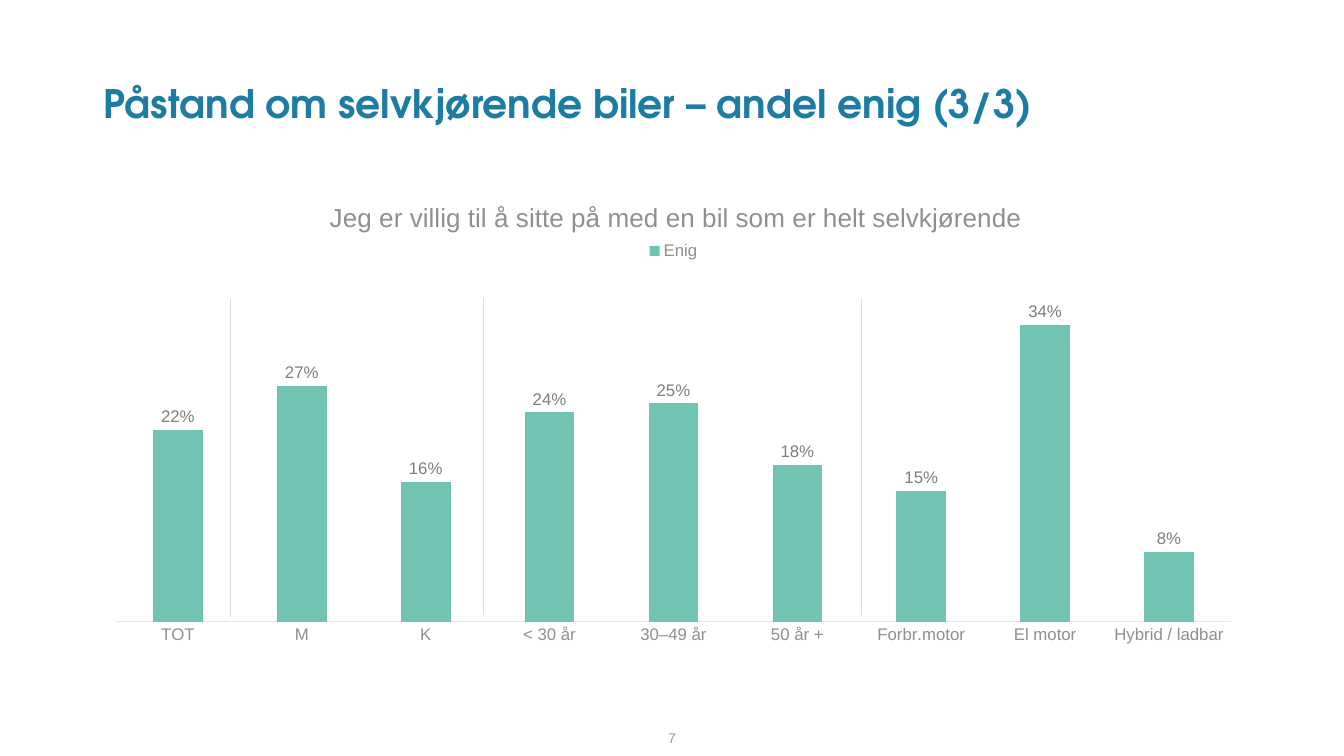
from dataclasses import dataclass

from lxml import etree
from pptx import Presentation
from pptx.chart.data import CategoryChartData
from pptx.dml.color import RGBColor
from pptx.enum.chart import XL_CHART_TYPE, XL_LABEL_POSITION, XL_LEGEND_POSITION, XL_TICK_MARK
from pptx.enum.shapes import MSO_CONNECTOR
from pptx.enum.text import MSO_ANCHOR, MSO_AUTO_SIZE, PP_ALIGN
from pptx.oxml.ns import qn
from pptx.util import Inches, Pt

COLUMNS = XL_CHART_TYPE.COLUMN_CLUSTERED
LABEL_OUTSIDE = XL_LABEL_POSITION.OUTSIDE_END
LEGEND_TOP = XL_LEGEND_POSITION.TOP
NO_TICKS = XL_TICK_MARK.NONE
STRAIGHT = MSO_CONNECTOR.STRAIGHT
BOTTOM, MIDDLE = MSO_ANCHOR.BOTTOM, MSO_ANCHOR.MIDDLE
NO_AUTOFIT = MSO_AUTO_SIZE.NONE
LEFT, CENTER = PP_ALIGN.LEFT, PP_ALIGN.CENTER
TITLE_ONLY = 5


@dataclass(frozen=True)
class Theme:
    heading_font: str = "TeX Gyre Adventor"
    body_font: str = "Arial"
    heading: str = "1C7CA1"
    page_number: str = "989998"
    chart_text: str = "515350"
    muted: str = "8E908C"
    value_label: str = "7C7F7B"
    bar: str = "71C3B3"
    axis: str = "E5E5E4"
    divider: str = "DCDDDC"
    heading_size: float = 28
    question_size: float = 18.6
    label_size: float = 12
    small_size: float = 10


THEME = Theme()
AGREEMENT = {
    "TOT": 0.22,
    "M": 0.27,
    "K": 0.16,
    "< 30 år": 0.24,
    "30–49 år": 0.25,
    "50 år +": 0.18,
    "Forbr.motor": 0.15,
    "El motor": 0.34,
    "Hybrid / ladbar": 0.08,
}
GROUP_DIVIDERS = [(2.28, 2.97, 6.12), (4.79, 2.96, 6.1), (8.54, 2.96, 6.1)]


def style_font(font, size, color, name=THEME.body_font, bold=False):
    font.size = Pt(size)
    font.color.rgb = RGBColor.from_string(color)
    font.name = name
    font.bold = bold


def set_heading(slide, text):
    heading = slide.shapes.title
    heading.left, heading.top = Inches(0.93), Inches(0.39)
    heading.width, heading.height = Inches(11.52), Inches(0.92)
    frame = heading.text_frame
    frame.text = text
    frame.auto_size = NO_AUTOFIT
    frame.vertical_anchor = BOTTOM
    paragraph = frame.paragraphs[0]
    paragraph.alignment = LEFT
    paragraph.line_spacing = 0.9
    style_font(paragraph.runs[0].font, THEME.heading_size, THEME.heading,
               THEME.heading_font, True)


def add_page_number(slide, number):
    frame = slide.shapes.add_textbox(
        Inches(6.29), Inches(7.15), Inches(0.75), Inches(0.35)).text_frame
    frame.text = number
    frame.word_wrap = True
    frame.vertical_anchor = MIDDLE
    paragraph = frame.paragraphs[0]
    paragraph.alignment = CENTER
    style_font(paragraph.runs[0].font, THEME.small_size, THEME.page_number)


def place_chart_part(part, index, x, y, w=None, h=None, inner=False):
    for old in part.findall(qn("c:layout")):
        part.remove(old)
    layout = etree.Element(qn("c:layout"))
    manual = etree.SubElement(layout, qn("c:manualLayout"))
    settings = [("xMode", "edge"), ("yMode", "edge"), ("x", x), ("y", y), ("w", w), ("h", h)]
    if inner:
        settings.insert(0, ("layoutTarget", "inner"))
    for tag, value in settings:
        if value is not None:
            etree.SubElement(manual, qn(f"c:{tag}")).set("val", str(value))
    part.insert(index, layout)


def style_axes(chart):
    groups = chart.category_axis
    groups.major_tick_mark = NO_TICKS
    groups.minor_tick_mark = NO_TICKS
    groups.format.line.color.rgb = RGBColor.from_string(THEME.axis)
    groups.format.line.width = Pt(0.75)
    style_font(groups.tick_labels.font, THEME.label_size, THEME.muted)
    shares = chart.value_axis
    shares.minimum_scale, shares.maximum_scale = 0, 0.4
    shares.has_major_gridlines = False
    shares.tick_labels.number_format = "0%"
    shares.tick_labels.number_format_is_linked = False
    shares.visible = False


def style_columns(chart):
    plot = chart.plots[0]
    plot.vary_by_categories = False
    plot.gap_width, plot.overlap = 150, -25
    agree = plot.series[0]
    agree.format.fill.solid()
    agree.format.fill.fore_color.rgb = RGBColor.from_string(THEME.bar)
    labels = agree.data_labels
    labels.show_value = True
    labels.number_format = "0%"
    labels.number_format_is_linked = False
    labels.position = LABEL_OUTSIDE
    style_font(labels.font, THEME.label_size, THEME.value_label)


def add_agreement_chart(slide, question):
    data = CategoryChartData(number_format="0%")
    data.categories = list(AGREEMENT)
    data.add_series("Enig", list(AGREEMENT.values()))
    chart = slide.shapes.add_chart(
        COLUMNS, Inches(0.92), Inches(1.7), Inches(11.52), Inches(4.78), data).chart
    style_font(chart.font, THEME.small_size, THEME.chart_text)
    chart.has_title = True
    caption = chart.chart_title.text_frame
    caption.text = question
    style_font(caption.paragraphs[0].runs[0].font, THEME.question_size, THEME.muted)
    chart.has_legend = True
    legend = chart.legend
    legend.position = LEGEND_TOP
    legend.include_in_layout = False
    style_font(legend.font, THEME.label_size, THEME.muted)
    style_axes(chart)
    style_columns(chart)
    chart_space = chart.element
    place_chart_part(chart_space.find(f".//{qn('c:plotArea')}"), 0, 0.02, 0.21, 0.96, 0.725, True)
    place_chart_part(chart_space.find(f".//{qn('c:title')}"), 1, 0.2, 0.05)
    place_chart_part(chart_space.find(f".//{qn('c:legend')}"), 1, 0.475, 0.14, 0.05, 0.05)


def add_divider(slide, x, top, bottom):
    divider = slide.shapes.add_connector(
        STRAIGHT, Inches(x), Inches(top), Inches(x), Inches(bottom))
    divider.line.color.rgb = RGBColor.from_string(THEME.divider)
    divider.line.width = Pt(0.5)
    etree.SubElement(divider.element.spPr, qn("a:effectLst"))


def main():
    deck = Presentation()
    deck.slide_width, deck.slide_height = Inches(13.33), Inches(7.5)
    slide = deck.slides.add_slide(deck.slide_layouts[TITLE_ONLY])
    set_heading(slide, "Påstand om selvkjørende biler – andel enig (3/3)")
    add_page_number(slide, "7")
    add_agreement_chart(slide, "Jeg er villig til å sitte på med en bil som er helt selvkjørende")
    for x, top, bottom in GROUP_DIVIDERS:
        add_divider(slide, x, top, bottom)
    deck.save("out.pptx")


if __name__ == "__main__":
    main()
